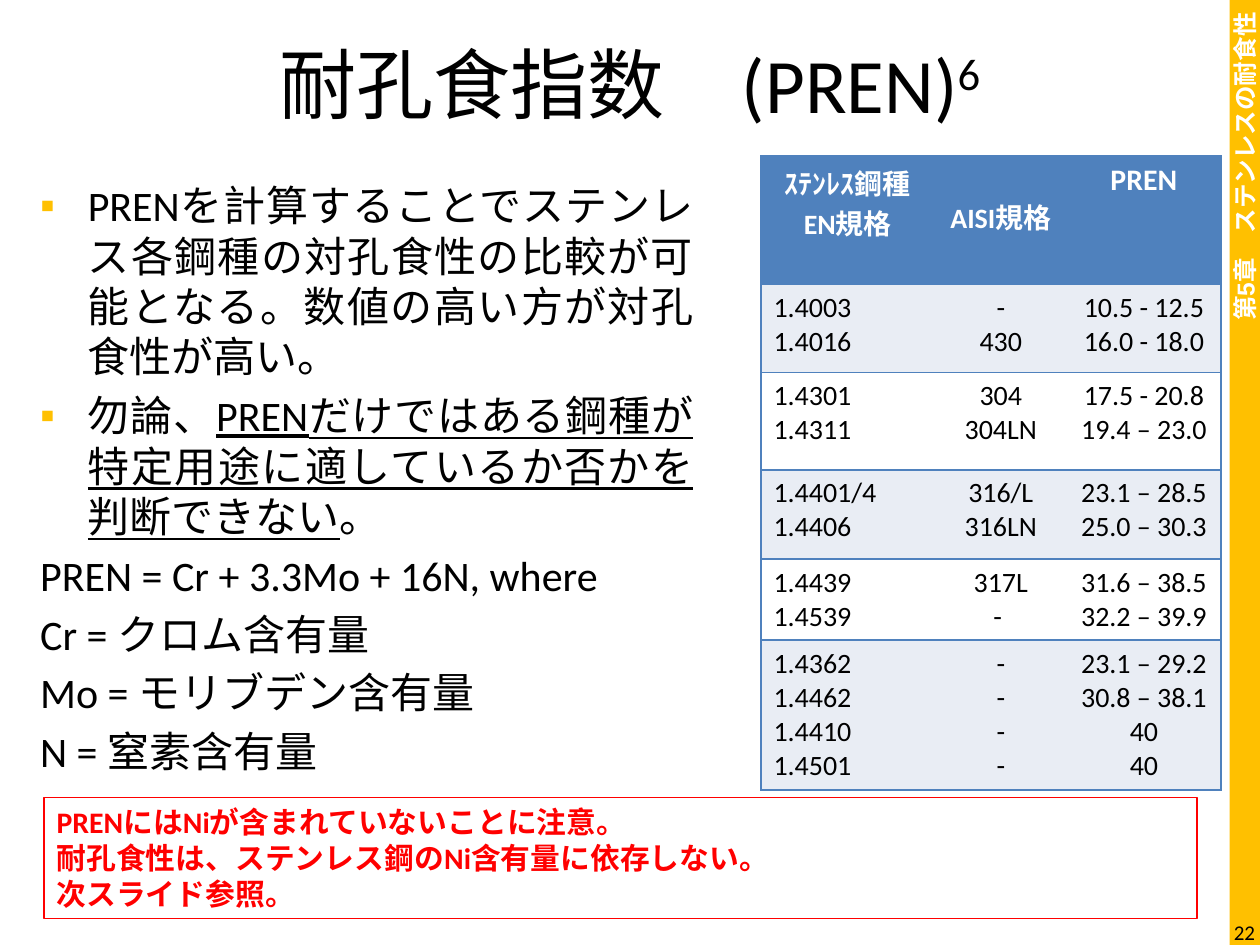
"""Build the slide on the pitting resistance index (PREN) of stainless steels."""
from lxml.etree import SubElement
from pptx import Presentation
from pptx.dml.color import RGBColor as Rgb
from pptx.enum.shapes import MSO_SHAPE as Kind
from pptx.enum.text import MSO_ANCHOR as Anchor, MSO_AUTO_SIZE as Auto, PP_ALIGN as Align
from pptx.oxml.ns import qn
from pptx.util import Cm, Pt

THEME = {
    "font": "Calibri", "side": "Arial",
    "ink": "000000", "white": "FFFFFF", "gold": "FFC000",
    "blue": "4F81BD", "pale": "E9EDF4", "red": "FF0000",
    "title": 44, "body": 24, "cell": 16, "head": 17, "note": 17, "tab": 14, "page": 12,
}

TITLE = [("耐孔食指数　(PREN)", {}), ("6", {"raise": 30000})]
CHAPTER = "第5章　ステンレスの耐食性"
PAGE = "22"
BULLETS = [
    [("PRENを計算することでステンレス各鋼種の対孔食性の比較が可能となる。数値の高い方が対孔食性が高い。", {})],
    [("勿論、", {}),
     ("PRENだけではある鋼種が特定用途に適しているか否かを判断できない", {"underline": True}),
     ("。", {})],
]
TERMS = ["PREN = Cr + 3.3Mo + 16N, where", "Cr = クロム含有量", "Mo = モリブデン含有量", "N = 窒素含有量"]
NOTE = ["PRENにはNiが含まれていないことに注意。", "耐孔食性は、ステンレス鋼のNi含有量に依存しない。", "次スライド参照。"]
HEAD = [["ｽﾃﾝﾚｽ鋼種", "EN規格"], ["AISI規格"], ["PREN"]]
GRADES = [
    [("1.4003", "-", "10.5 - 12.5"), ("1.4016", "430", "16.0 - 18.0")],
    [("1.4301", "304", "17.5 - 20.8"), ("1.4311", "304LN", "19.4 – 23.0")],
    [("1.4401/4", "316/L", "23.1 – 28.5"), ("1.4406", "316LN", "25.0 – 30.3")],
    [("1.4439", "317L", "31.6 – 38.5"), ("1.4539", "- ", "32.2 – 39.9")],
    [("1.4362", "-", "23.1 – 29.2"), ("1.4462", "-", "30.8 – 38.1"),
     ("1.4410", "-", "40"), ("1.4501", "-", "40")],
]
COLS = [3.5, 2.67, 3.1]
ROWS = [2.59, 1.78, 1.96, 1.8, 1.61, 3.02]


def place(*box):
    return [Cm(n) for n in box]


def color(name):
    return Rgb.from_string(THEME[name])


def style(run, size, ink="ink", face="font", **more):
    lift = more.pop("raise", None)
    form = {"name": THEME[face], "size": Pt(THEME[size]), **more}
    for key, val in form.items():
        setattr(run.font, key, val)
    run.font.color.rgb = color(ink)
    if lift:
        run.font._element.set("baseline", str(lift))


def write(frame, paras, size, align=Align.LEFT, **form):
    for i, runs in enumerate(paras):
        para = frame.paragraphs[0] if i == 0 else frame.add_paragraph()
        para.alignment = align
        for text, extra in [(runs, {})] if isinstance(runs, str) else runs:
            run = para.add_run()
            run.text = text
            style(run, size, **{**form, **extra})
    return frame.paragraphs


def add_box(slide, box):
    frame = slide.shapes.add_textbox(*place(*box)).text_frame
    frame.word_wrap = True
    return frame


def add_rect(slide, box):
    shape = slide.shapes.add_shape(Kind.RECTANGLE, *place(*box))
    shape.shadow.inherit = False
    shape.text_frame.word_wrap = True
    return shape


def add_mark(para):
    props = para._p.get_or_add_pPr()
    props.set("marL", str(Cm(0.96)))
    props.set("indent", str(-Cm(0.96)))
    tint = SubElement(props, qn("a:buClr"))
    SubElement(tint, qn("a:srgbClr"), val=THEME["gold"])
    SubElement(props, qn("a:buFont"), typeface=THEME["side"])
    SubElement(props, qn("a:buChar"), char="▪")


def add_edges(cell, sides):
    props = cell._tc.get_or_add_tcPr()
    for side in "LRTB":
        line = SubElement(props, qn(f"a:ln{side}"), w=str(Pt(1)))
        if side in sides:
            fill = SubElement(line, qn("a:solidFill"))
            SubElement(fill, qn("a:srgbClr"), val=THEME["blue"])
        else:
            SubElement(line, qn("a:noFill"))


def add_grades(slide):
    box = place(15.34, 3.14, sum(COLS), sum(ROWS))
    table = slide.shapes.add_table(len(ROWS), len(COLS), *box).table
    for col, wide in zip(table.columns, COLS):
        col.width = Cm(wide)
    for row, tall in zip(table.rows, ROWS):
        row.height = Cm(tall)
    body = [list(zip(*group)) for group in GRADES]
    for r, row in enumerate([HEAD] + body):
        for c, lines in enumerate(row):
            cell = table.cell(r, c)
            add_edges(cell, "TB" + {0: "L", len(COLS) - 1: "R"}.get(c, ""))
            cell.fill.solid()
            cell.fill.fore_color.rgb = color("blue" if r == 0 else "pale" if r % 2 else "white")
            align = Align.JUSTIFY if r and c == 0 else Align.CENTER
            size = "head" if r == 0 and c == 2 else "cell"
            write(cell.text_frame, lines, size, align,
                  ink="ink" if r else "white", bold=r == 0)
    table.cell(0, 1).margin_top = Cm(0.82)


def main():
    deck = Presentation()
    deck.slide_width, deck.slide_height = place(25.4, 19.05)
    slide = deck.slides.add_slide(deck.slide_layouts[5])

    bar = add_rect(slide, (24.79, 0, 0.61, 19.05))
    bar.fill.solid()
    bar.fill.fore_color.rgb = color("gold")
    bar.line.fill.background()
    bar.text_frame.vertical_anchor = Anchor.MIDDLE
    bar.text_frame._txBody.bodyPr.set("vert", "vert270")
    write(bar.text_frame, [CHAPTER], "tab", Align.RIGHT, ink="white", face="side", bold=True)

    title = slide.shapes.title
    title.left, title.top, title.width, title.height = place(1.27, 0.76, 22.86, 1.8)
    title.text_frame.vertical_anchor = Anchor.MIDDLE
    write(title.text_frame, [TITLE], "title", Align.CENTER)

    add_grades(slide)

    page = add_box(slide, (24.46, 18.29, 1.09, 1.02))
    page.vertical_anchor = Anchor.MIDDLE
    write(page, [PAGE], "page", Align.RIGHT)

    paras = write(add_box(slide, (0.56, 3.5, 13.67, 12.57)), BULLETS + TERMS, "body")
    for i, para in enumerate(paras):
        para.space_before = Pt(4.8)
        if i < len(BULLETS):
            para.alignment = Align.JUSTIFY
            add_mark(para)

    note = add_rect(slide, (0.89, 16.08, 23.24, 2.44))
    note.fill.background()
    note.line.color.rgb = color("red")
    note.line.width = Pt(0.75)
    note.text_frame.vertical_anchor = Anchor.TOP
    note.text_frame.auto_size = Auto.SHAPE_TO_FIT_TEXT
    write(note.text_frame, NOTE, "note", ink="red", bold=True)

    deck.save("out.pptx")


if __name__ == "__main__":
    main()
